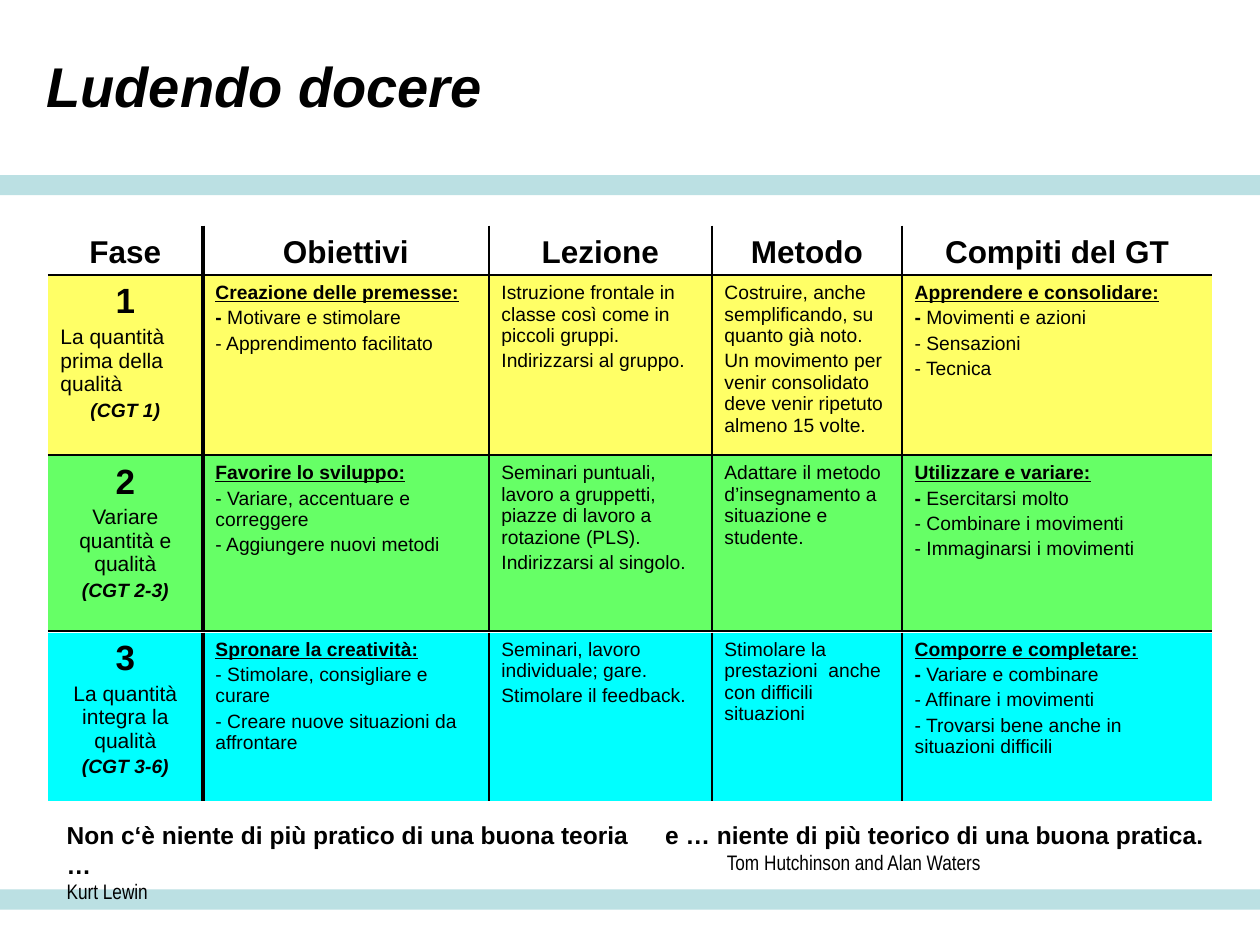
from lxml.etree import SubElement
from pptx import Presentation
from pptx.dml.color import RGBColor
from pptx.enum.shapes import MSO_SHAPE
from pptx.enum.text import MSO_ANCHOR, PP_ALIGN
from pptx.oxml.ns import qn
from pptx.util import Inches, Pt

BLACK = RGBColor(0x00, 0x00, 0x00)
BAND = RGBColor(0xBB, 0xE0, 0xE3)
YELLOW = RGBColor(0xFF, 0xFF, 0x66)
GREEN = RGBColor(0x66, 0xFF, 0x66)
CYAN = RGBColor(0x00, 0xFF, 0xFF)

LEFT, CENTER = PP_ALIGN.LEFT, PP_ALIGN.CENTER
COLS = [1.23, 2.27, 1.77, 1.51, 2.46]


def write(tf, paragraphs, spacing=0.0):
    """Each paragraph is (alignment, size, runs); a run is (text, style, font),
    where the style letters are b, i and u."""
    tf.word_wrap = True
    for n, (align, size, runs) in enumerate(paragraphs):
        p = tf.add_paragraph() if n else tf.paragraphs[0]
        p.alignment = align
        if n and spacing:
            p.space_before = Pt(round(size * spacing, 1))
        for text, style, font in runs:
            r = p.add_run()
            r.text = text
            r.font.name = font
            r.font.size = Pt(size)
            r.font.color.rgb = BLACK
            r.font.bold = "b" in style
            r.font.italic = "i" in style
            r.font.underline = "u" in style


def set_borders(cell, widths):
    """Widths in points for left, right, top and bottom; 0 is no line."""
    tcPr = cell._tc.get_or_add_tcPr()
    for n, (side, width) in enumerate(zip("LRTB", widths)):
        ln = SubElement(tcPr, qn(f"a:ln{side}"), w=str(Pt(width)))
        if width:
            fill = SubElement(ln, qn("a:solidFill"))
            SubElement(fill, qn("a:srgbClr"), val=str(BLACK))
        else:
            SubElement(ln, qn("a:noFill"))
        tcPr.insert(n, ln)


prs = Presentation()
prs.slide_width, prs.slide_height = Inches(10), Inches(7.5)
s = prs.slides.add_slide(prs.slide_layouts[6])

# Horizontal bands
for top in (1.39, 7.06):
    sp = s.shapes.add_shape(MSO_SHAPE.RECTANGLE, 0, Inches(top), Inches(10), Inches(0.16))
    sp.shadow.inherit = False
    sp.fill.solid()
    sp.fill.fore_color.rgb = BAND
    sp.line.fill.background()

# Title
tf = s.shapes.add_textbox(Inches(0.27), Inches(0.05), Inches(8.51), Inches(1.25)).text_frame
tf.vertical_anchor = MSO_ANCHOR.MIDDLE
write(tf, [(LEFT, 32, [("Ludendo docere", "bi", "Arial")])])

# Phases: number, alignment, motto, code, then one list of lines per column
HEADERS = ["Fase", "Obiettivi", "Lezione", "Metodo", "Compiti del GT"]
PHASES = [
    ("1", LEFT, "La quantità prima della qualità", "(CGT 1)", [
        ["Creazione delle premesse:", "Motivare e stimolare", "- Apprendimento facilitato"],
        ["Istruzione frontale in classe così come in piccoli gruppi.", "Indirizzarsi al gruppo."],
        ["Costruire, anche semplificando, su quanto già noto.",
         "Un movimento per venir consolidato deve venir ripetuto almeno 15 volte."],
        ["Apprendere e consolidare:", "Movimenti e azioni", "- Sensazioni", "- Tecnica"]]),
    ("2", CENTER, "Variare quantità e qualità", "(CGT 2-3)", [
        ["Favorire lo sviluppo:", "- Variare, accentuare e correggere",
         "- Aggiungere nuovi metodi"],
        ["Seminari puntuali, lavoro a gruppetti, piazze di lavoro a rotazione (PLS).",
         "Indirizzarsi al singolo."],
        ["Adattare il metodo d’insegnamento a situazione e studente."],
        ["Utilizzare e variare:", "Esercitarsi molto", "- Combinare i movimenti",
         "- Immaginarsi i movimenti"]]),
    ("3", CENTER, "La quantità integra la qualità", "(CGT 3-6)", [
        ["Spronare la creatività:", "- Stimolare, consigliare e curare",
         "- Creare nuove situazioni da affrontare"],
        ["Seminari, lavoro individuale; gare.", "Stimolare il feedback."],
        ["Stimolare la prestazioni  anche con difficili situazioni"],
        ["Comporre e completare:", "Variare e combinare", "- Affinare i movimenti",
         "- Trovarsi bene anche in situazioni difficili"]]),
]

# Turn the wording into cell paragraphs
rows = [[[(CENTER, 18, [(name, "b", "Arial")])] for name in HEADERS]]
for number, align, motto, code, columns in PHASES:
    row = [[(CENTER, 20, [(number, "b", "Arial")]),
            (align, 12, [(motto, "", "Arial")]),
            (CENTER, 11, [(code, "bi", "Arial")])]]
    for c, lines in enumerate(columns):
        cell_paragraphs = []
        for n, line in enumerate(lines):
            runs = [(line, "", "Arial")]
            if c in (0, 3):
                if n == 0:
                    runs = [(line, "bu", "Arial")]
                elif not line.startswith("-"):
                    # A bold dash leads the first item
                    runs = [("- ", "b", "Arial"), (line, "", "Arial")]
            cell_paragraphs.append((LEFT, 11, runs))
        row.append(cell_paragraphs)
    rows.append(row)

# One single-row table per band: top, height, fill, bottom line
BANDS = [(1.79, 0.39, None, 3), (2.19, 1.42, YELLOW, 1),
         (3.62, 1.39, GREEN, 1), (5.02, 1.34, CYAN, 0)]
for row, (top, height, color, bottom) in zip(rows, BANDS):
    table = s.shapes.add_table(1, len(COLS), Inches(0.38), Inches(top),
                               Inches(sum(COLS)), Inches(height)).table
    table.first_row = table.horz_banding = False
    table.rows[0].height = Inches(height)
    for c, width in enumerate(COLS):
        table.columns[c].width = Inches(width)
        cell = table.cell(0, c)
        if color is None:
            cell.fill.background()
            cell.vertical_anchor = MSO_ANCHOR.BOTTOM
        else:
            cell.fill.solid()
            cell.fill.fore_color.rgb = color
        write(cell.text_frame, row[c], 0.2)
        dividers = [0, 3, 1, 1, 1, 0]
        set_borders(cell, (dividers[c], dividers[c + 1], 0, bottom))

# Closing quotes: left, width, quote, author, author indent
QUOTES = [
    (0.43, 4.88, "Non c‘è niente di più pratico di una buona teoria …", "Kurt Lewin", 0),
    (5.18, 4.55, "e … niente di più teorico di una buona pratica.",
     "Tom Hutchinson and Alan Waters", 0.49),
]
for left, width, quote, author, indent in QUOTES:
    tf = s.shapes.add_textbox(Inches(left), Inches(6.46), Inches(width), Inches(0.54)).text_frame
    write(tf, [(LEFT, 14, [(quote, "b", "Arial")]),
               (LEFT, 12, [(author, "", "Arial Narrow")])])
    tf.paragraphs[1]._p.get_or_add_pPr().set("marL", str(Inches(indent)))

prs.save("out.pptx")
